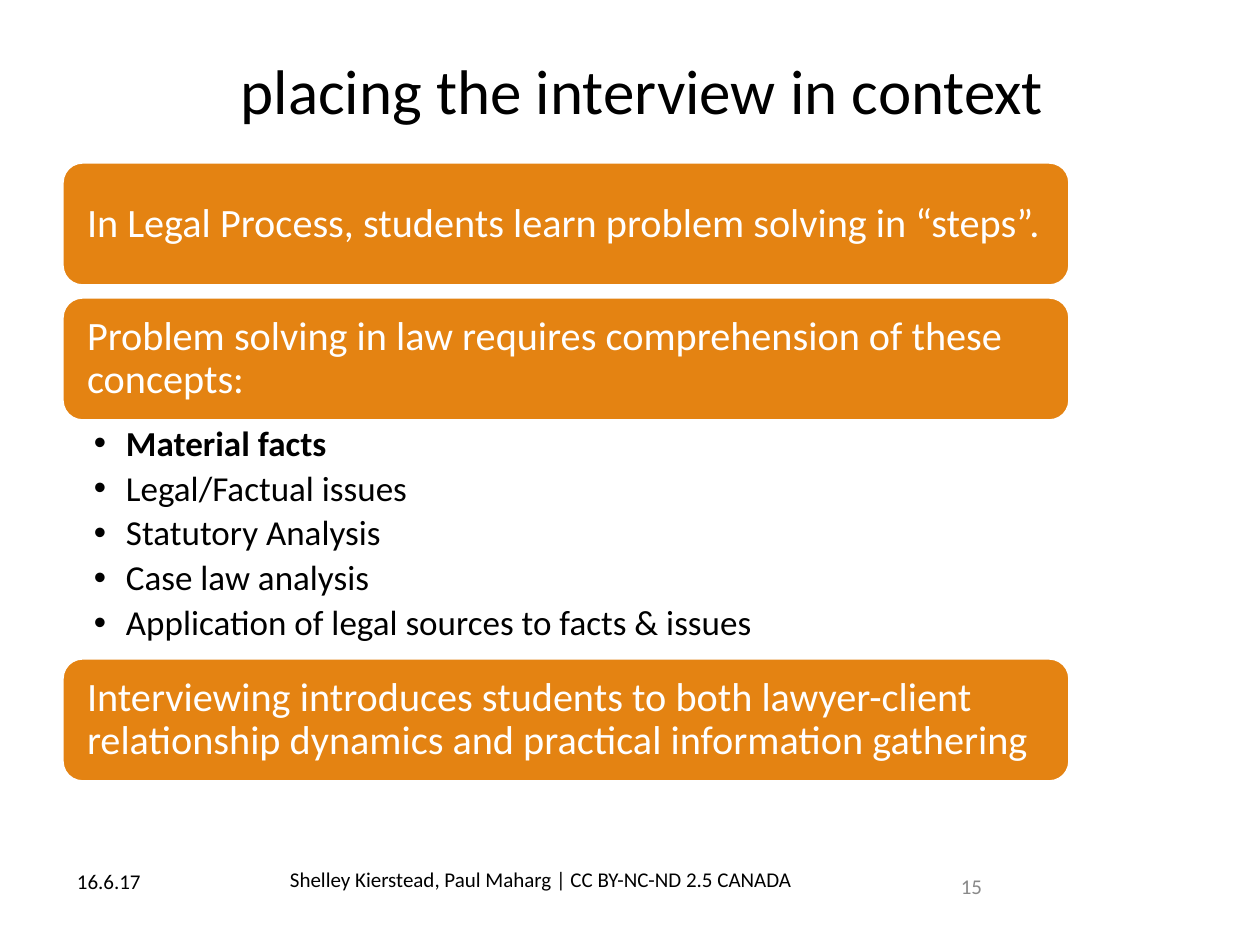
from lxml import etree
from pptx import Presentation
from pptx.dml.color import RGBColor
from pptx.enum.shapes import MSO_SHAPE
from pptx.enum.text import MSO_ANCHOR, PP_ALIGN
from pptx.oxml.ns import qn
from pptx.util import Emu, Pt

EMU_PER_PX = 914400 // 126
ORANGE = RGBColor(0xE4, 0x83, 0x12)
WHITE = RGBColor(0xFF, 0xFF, 0xFF)
BLACK = RGBColor(0x00, 0x00, 0x00)
GREY = RGBColor(0x89, 0x89, 0x89)
ROUNDED = MSO_SHAPE.ROUNDED_RECTANGLE
LEFT, CENTER, RIGHT = PP_ALIGN.LEFT, PP_ALIGN.CENTER, PP_ALIGN.RIGHT
TOP, MIDDLE = MSO_ANCHOR.TOP, MSO_ANCHOR.MIDDLE


def px(length):
    return Emu(length * EMU_PER_PX)


class SlideBuilder:
    font_name = "Calibri"
    card_size = 23
    bullet_size = 20
    line_spacing = 0.9

    def __init__(self, slide):
        self.slide = slide

    def frame(self, shape, anchor, insets=(13, 6, 13, 6)):
        frame = shape.text_frame
        frame.word_wrap = True
        frame.vertical_anchor = anchor
        frame.margin_left, frame.margin_top, frame.margin_right, frame.margin_bottom = map(px, insets)
        return frame

    def run(self, paragraph, words, size, color, bold=False):
        run = paragraph.add_run()
        run.text = words
        run.font.name = self.font_name
        run.font.size = Pt(size)
        run.font.bold = bold
        run.font.color.rgb = color

    def text(self, box, words, size, color=BLACK, align=LEFT, anchor=TOP):
        shape = self.slide.shapes.add_textbox(*map(px, box))
        paragraph = self.frame(shape, anchor).paragraphs[0]
        paragraph.alignment = align
        self.run(paragraph, words, size, color)

    def card(self, box, words):
        shape = self.slide.shapes.add_shape(ROUNDED, *map(px, box))
        shape.shadow.inherit = False
        shape.fill.solid()
        shape.fill.fore_color.rgb = ORANGE
        shape.line.color.rgb = WHITE
        shape.line.width = Pt(2)
        paragraph = self.frame(shape, MIDDLE, (19, 13, 19, 13)).paragraphs[0]
        paragraph.alignment = LEFT
        paragraph.line_spacing = self.line_spacing
        self.run(paragraph, words, self.card_size, WHITE)

    def bullets(self, box, items, key_item):
        shape = self.slide.shapes.add_textbox(*map(px, box))
        frame = self.frame(shape, TOP, (32, 4, 20, 4))
        for index, item in enumerate(items):
            paragraph = frame.add_paragraph() if index else frame.paragraphs[0]
            properties = paragraph._p.get_or_add_pPr()
            properties.set("marL", str(px(32)))
            properties.set("indent", str(px(-32)))
            etree.SubElement(properties, qn("a:buFont")).set("typeface", "Arial")
            etree.SubElement(properties, qn("a:buChar")).set("char", "•")
            paragraph.line_spacing = self.line_spacing
            paragraph.space_after = Pt(4)
            self.run(paragraph, item, self.bullet_size, BLACK, item == key_item)


def main():
    presentation = Presentation()
    presentation.slide_width = px(1260)
    presentation.slide_height = px(945)
    builder = SlideBuilder(presentation.slides.add_slide(presentation.slide_layouts[6]))

    builder.text((63, 10, 1008, 158), "placing the interview in context ", 36, align=RIGHT, anchor=MIDDLE)

    steps = [
        (162, "In Legal Process, students learn problem solving in “steps”."),
        (297, "Problem solving in law requires comprehension of these concepts:"),
        (658, "Interviewing introduces students to both lawyer-client "
              "relationship dynamics and practical information gathering"),
    ]
    for top, words in steps:
        builder.card((62, top, 1008, 124), words)

    concepts = [
        "Material facts",
        "Legal/Factual issues",
        "Statutory Analysis",
        "Case law analysis",
        "Application of legal sources to facts & issues",
    ]
    builder.bullets((62, 422, 1008, 236), concepts, key_item="Material facts")

    builder.text((64, 863, 189, 63), "16.6.17", 12)
    builder.text((888, 861, 107, 50), "15", 12, GREY, RIGHT, MIDDLE)
    builder.text((253, 861, 576, 63), "Shelley Kierstead, Paul Maharg | CC BY-NC-ND 2.5 CANADA", 12, align=CENTER)

    presentation.save("out.pptx")


if __name__ == "__main__":
    main()
